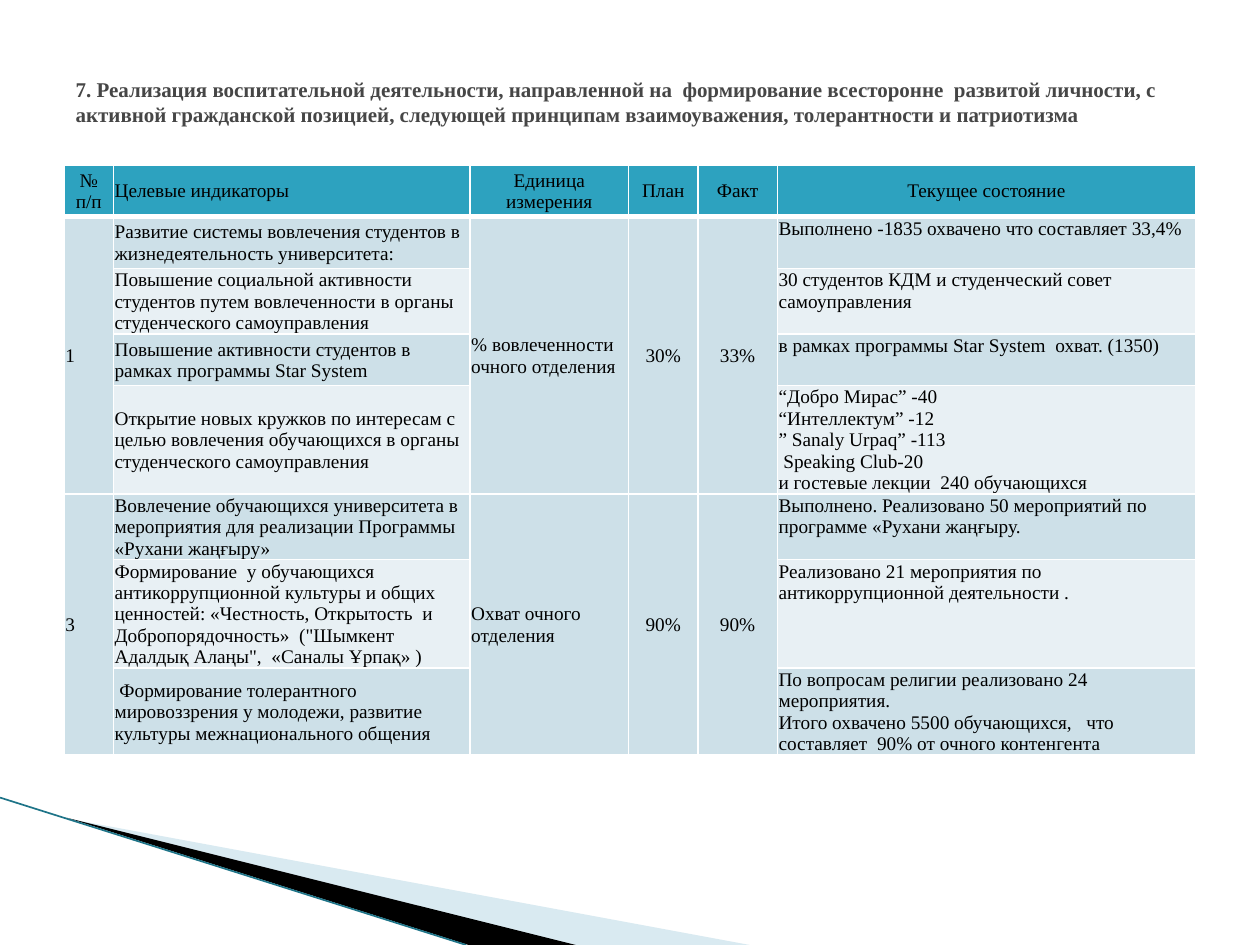
from dataclasses import dataclass
from lxml import etree
from pptx import Presentation
from pptx.dml.color import RGBColor
from pptx.enum.shapes import MSO_CONNECTOR
from pptx.enum.text import MSO_ANCHOR, MSO_AUTO_SIZE, PP_ALIGN
from pptx.oxml.ns import qn
from pptx.util import Inches, Pt

LEFT, MID, JUST = PP_ALIGN.LEFT, PP_ALIGN.CENTER, PP_ALIGN.JUSTIFY
TOP, CORE = MSO_ANCHOR.TOP, MSO_ANCHOR.MIDDLE
LINE = MSO_CONNECTOR.STRAIGHT
FIXED = MSO_AUTO_SIZE.NONE

WHITE = RGBColor(0xFF, 0xFF, 0xFF)
BLACK = RGBColor(0x00, 0x00, 0x00)
GREY = RGBColor(0x46, 0x46, 0x46)
HEAD = RGBColor(0x2D, 0xA2, 0xBF)
DARK = RGBColor(0xCD, 0xE0, 0xE8)
PALE = RGBColor(0xE8, 0xF0, 0xF4)
SKY = RGBColor(0xA0, 0xCB, 0xDC)
TEAL = RGBColor(0x1E, 0x74, 0x88)

CELL = {"name": "Times New Roman", "size": Pt(11), "bold": False}
TITLE = {"name": "Times New Roman", "size": Pt(12), "bold": True}
PAD = {"margin_left": Inches(0.01), "margin_right": Inches(0.01),
       "margin_top": Inches(0.01), "margin_bottom": 0}
WIDTHS = (0.39, 2.83, 1.26, 0.55, 0.63, 3.32)
HEIGHTS = (0.41, 0.41, 0.52, 0.41, 0.86, 0.52, 0.86, 0.69)
ALIGNS = (JUST, LEFT, LEFT, MID, MID, LEFT)
HEADS = ("№ п/п", "Целевые индикаторы", "Единица измерения",
         "План", "Факт", "Текущее состояние")


@dataclass
class Wedge:
    points: tuple
    color: RGBColor
    alpha: int


@dataclass
class Group:
    num: str
    unit: str
    plan: str
    fact: str
    items: tuple


WEDGES = (
    Wedge(((0.55, 6.5), (5.95, 7.5), (4.56, 7.5)), SKY, 40),
    Wedge(((0.53, 6.49), (4.57, 7.5), (3.72, 7.5)), BLACK, 100),
)

GROUPS = (
    Group("1", "% вовлеченности очного отделения", "30%", "33%", (
        ("Развитие системы вовлечения студентов в жизнедеятельность университета:",
         ("Выполнено -1835 охвачено что составляет 33,4%",)),
        ("Повышение социальной активности студентов путем вовлеченности "
         "в органы студенческого самоуправления",
         ("30 студентов КДМ и студенческий совет самоуправления",)),
        ("Повышение активности студентов в рамках программы Star System",
         ("в рамках программы Star System  охват. (1350)",)),
        ("Открытие новых кружков по интересам с целью вовлечения "
         "обучающихся в органы студенческого самоуправления",
         ("“Добро Мирас” -40\n“Интеллектум” -12\n” Sanaly Urpaq” -113\n"
          " Speaking Club-20\nи гостевые лекции  240 обучающихся",)),
    )),
    Group("3", "Охват очного отделения", "90%", "90%", (
        ("Вовлечение обучающихся университета в мероприятия "
         "для реализации Программы «Рухани жаңғыру»",
         ("Выполнено. Реализовано 50 мероприятий по программе «Рухани жаңғыру.",)),
        ("Формирование  у обучающихся антикоррупционной культуры и общих "
         "ценностей: «Честность, Открытость  и Добропорядочность»  "
         "(\"Шымкент Адалдық Алаңы\",  «Саналы Ұрпақ» )",
         ("Реализовано 21 мероприятия по антикоррупционной деятельности .",)),
        (" Формирование толерантного мировоззрения у молодежи, "
         "развитие культуры межнационального общения",
         ("По вопросам религии реализовано 24 мероприятия.",
          "Итого охвачено 5500 обучающихся,   что составляет  90% "
          "от очного контенгента")),
    )),
)


def style(item, values: dict) -> None:
    for key, value in values.items():
        setattr(item, key, value)


def write(frame, lines: tuple, align, font: dict, color: RGBColor) -> None:
    for i, line in enumerate(lines):
        para = frame.paragraphs[0] if i == 0 else frame.add_paragraph()
        para.text = line
        para.alignment = align
        for run in para.runs:
            style(run.font, font)
            run.font.color.rgb = color


def edge(cell, base: float) -> None:
    props = cell._tc.get_or_add_tcPr()
    for i, side in enumerate(("L", "R", "T", "B")):
        width = base if side == "B" else 1
        line = etree.Element(qn(f"a:ln{side}"), w=str(Pt(width)))
        fill = etree.SubElement(line, qn("a:solidFill"))
        etree.SubElement(fill, qn("a:srgbClr"), val=str(WHITE))
        props.insert(i, line)


def paint(cell, color: RGBColor, base: float = 1) -> None:
    style(cell, PAD)
    cell.fill.solid()
    cell.fill.fore_color.rgb = color
    edge(cell, base)


def draw_wedge(slide, wedge: Wedge) -> None:
    dots = [(Inches(x), Inches(y)) for x, y in wedge.points]
    pen = slide.shapes.build_freeform(*dots[0])
    pen.add_line_segments(dots[1:], close=True)
    shape = pen.convert_to_shape()
    shape.shadow.inherit = False
    shape.line.fill.background()
    shape.fill.solid()
    shape.fill.fore_color.rgb = wedge.color
    if wedge.alpha < 100:
        tint = shape._element.spPr.find(f".//{qn('a:srgbClr')}")
        etree.SubElement(tint, qn("a:alpha"), val=str(wedge.alpha * 1000))


def draw_line(slide) -> None:
    line = slide.shapes.add_connector(
        LINE, 0, Inches(6.33), Inches(3.7), Inches(7.5))
    line.line.color.rgb = TEAL
    line.line.width = Pt(0.95)
    etree.SubElement(line._element.spPr, qn("a:effectLst"))


def draw_title(slide) -> None:
    title = slide.shapes.title
    style(title, {"left": Inches(0.5), "top": Inches(0.3),
                  "width": Inches(9), "height": Inches(1.01)})
    style(title.text_frame, {"word_wrap": True, "auto_size": FIXED,
                             "vertical_anchor": CORE})
    text = ("7. Реализация воспитательной деятельности, направленной на  "
            "формирование всесторонне  развитой личности, с активной "
            "гражданской позицией, следующей принципам взаимоуважения, "
            "толерантности и патриотизма")
    write(title.text_frame, (text,), LEFT, TITLE, GREY)


def draw_table(slide) -> None:
    table = slide.shapes.add_table(
        len(HEIGHTS), len(WIDTHS), Inches(0.51), Inches(1.31),
        Inches(sum(WIDTHS)), Inches(sum(HEIGHTS))).table
    for col, width in zip(table.columns, WIDTHS):
        col.width = Inches(width)
    for row, height in zip(table.rows, HEIGHTS):
        row.height = Inches(height)

    for c, text in enumerate(HEADS):
        cell = table.cell(0, c)
        paint(cell, HEAD, 3)
        cell.vertical_anchor = CORE
        write(cell.text_frame, (text,), LEFT if c == 1 else MID, CELL, BLACK)

    row = 1
    for group in GROUPS:
        last = row + len(group.items) - 1
        for c in (0, 2, 3, 4):
            table.cell(row, c).merge(table.cell(last, c))
        for i, (goal, state) in enumerate(group.items):
            cells = [(1, (goal,)), (5, state)]
            if i == 0:
                cells += [(0, (group.num,)), (2, (group.unit,)),
                          (3, (group.plan,)), (4, (group.fact,))]
            for c in range(len(WIDTHS)):
                shade = PALE if i % 2 and c in (1, 5) else DARK
                paint(table.cell(row + i, c), shade)
            for c, lines in cells:
                cell = table.cell(row + i, c)
                cell.vertical_anchor = TOP if c == 5 else CORE
                write(cell.text_frame, lines, ALIGNS[c], CELL, BLACK)
        row = last + 1


def main() -> None:
    deck = Presentation()
    deck.slide_width, deck.slide_height = Inches(10), Inches(7.5)
    slide = deck.slides.add_slide(deck.slide_layouts[5])
    for wedge in WEDGES:
        draw_wedge(slide, wedge)
    draw_line(slide)
    draw_table(slide)
    draw_title(slide)
    deck.save("out.pptx")


if __name__ == "__main__":
    main()
